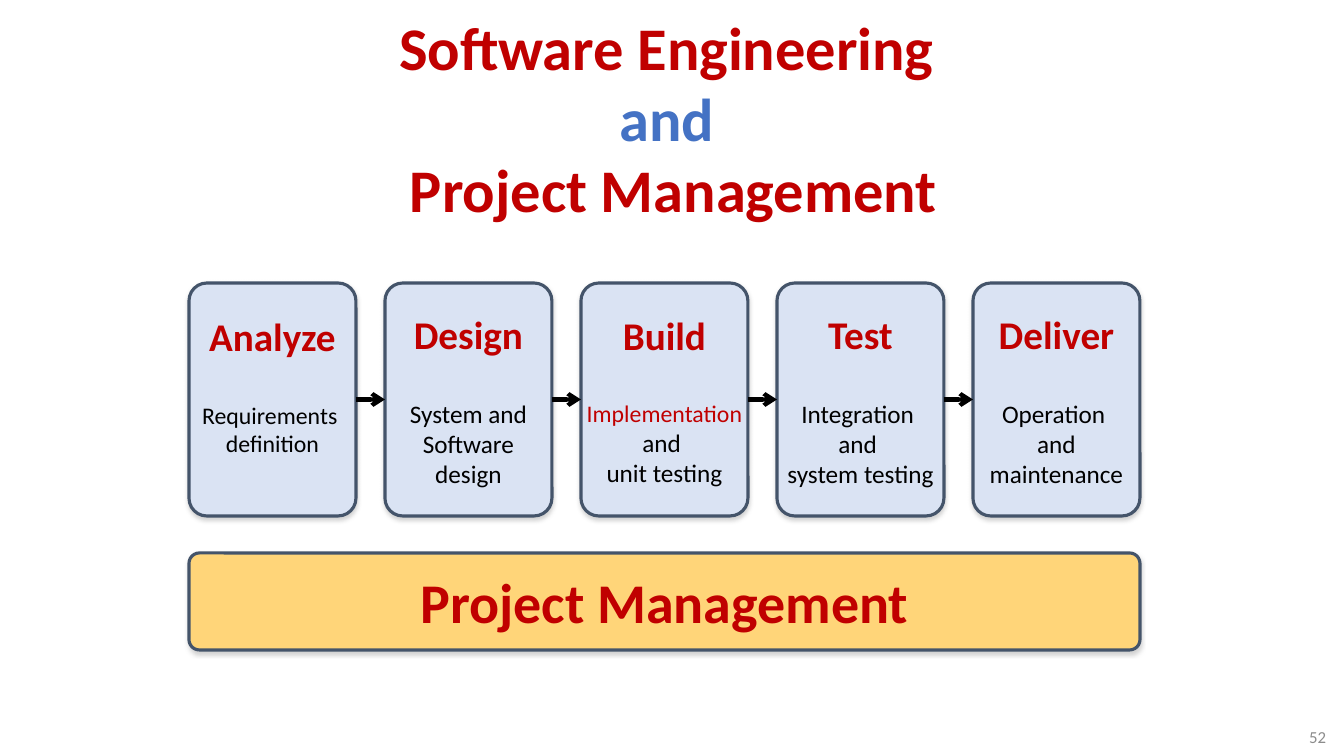
from itertools import pairwise

from lxml.etree import SubElement
from pptx import Presentation
from pptx.dml.color import RGBColor
from pptx.enum.shapes import MSO_CONNECTOR as LINK, MSO_SHAPE as SHAPE
from pptx.enum.text import MSO_ANCHOR as ANCHOR, MSO_AUTO_SIZE as FIT, PP_ALIGN as ALIGN
from pptx.oxml import parse_xml
from pptx.oxml.ns import nsdecls, qn
from pptx.util import Pt

PX = 914400 / 100.8
FONT = "Calibri"
RED = RGBColor(0xC0, 0x00, 0x00)
BLUE = RGBColor(0x44, 0x72, 0xC4)
BLACK = RGBColor(0x00, 0x00, 0x00)
GRAY = RGBColor(0x8C, 0x8C, 0x8C)
SLATE = RGBColor(0x44, 0x54, 0x6A)
PALE = RGBColor(0xDA, 0xE3, 0xF3)
GOLD = RGBColor(0xFF, 0xD5, 0x79)

LEFT, TOP, WIDE, HIGH, STEP = 189, 283, 167, 233, 196
BAR_TOP, BAR_HIGH = 553, 97
RADIUS = 0.107

# Stage name, body paragraphs as (text, size, colour) runs, bottom inset
STAGES = [
    ("Analyze", [[("Requirements \ndefinition", 17, BLACK)]], 29),
    ("Design", [[("System and Software design", 18, BLACK)]], 0),
    ("Build", [[("Implementation", 17, RED), (" ", 16, RED), ("and ", 18, BLACK)],
               [("unit testing", 18, BLACK)]], 0),
    ("Test", [[("Integration \nand \nsystem testing", 18, BLACK)]], 0),
    ("Deliver", [[("Operation \nand maintenance", 18, BLACK)]], 0),
]


def px(*nums):
    return [round(n * PX) for n in nums]


def write(para, runs, bold=False, align=ALIGN.CENTER):
    """Add (text, size, colour) runs, with a line break at each newline."""
    para.alignment = align
    for text, size, color in runs:
        for i, line in enumerate(text.split("\n")):
            if i:
                para.add_line_break()
            if line:
                run = para.add_run()
                run.text = line
                font = run.font
                font.name, font.size, font.bold = FONT, Pt(size), bold
                font.color.rgb = color


def add_title(slide):
    title = slide.shapes.title
    title.left, title.top, title.width, title.height = px(220, 13, 907, 215)
    frame = title.text_frame
    frame.auto_size, frame.word_wrap = FIT.NONE, True
    frame.vertical_anchor = ANCHOR.MIDDLE
    para = frame.paragraphs[0]
    para.line_spacing = 0.98
    write(para, [("Software Engineering \n", 43.2, RED), ("and \n", 43.2, BLUE),
                 ("Project Management", 43.2, RED)], True)


def add_box(slide, x, y, w, h, fill, head, size, foot=0):
    """Add a rounded, shadowed box with a bold red heading."""
    box = slide.shapes.add_shape(SHAPE.ROUNDED_RECTANGLE, *px(x, y, w, h))
    box.adjustments[0] = RADIUS
    box.fill.solid()
    box.fill.fore_color.rgb = fill
    box.line.color.rgb = SLATE
    box.line.width = Pt(2.25)
    box.shadow.inherit = False
    box._element.spPr.find(qn("a:effectLst")).append(parse_xml(
        f'<a:outerShdw {nsdecls("a")} blurRad="{Pt(3.1)}" dist="{Pt(1.8)}" '
        'dir="5400000" rotWithShape="0"><a:srgbClr val="808080">'
        '<a:alpha val="35000"/></a:srgbClr></a:outerShdw>'))
    frame = box.text_frame
    frame.word_wrap, frame.vertical_anchor = True, ANCHOR.MIDDLE
    frame.margin_left = frame.margin_right = frame.margin_top = 0
    frame.margin_bottom = px(foot)[0]
    write(frame.paragraphs[0], [(head, size, RED)], True)
    return box


def add_stage(slide, i, name, body, foot):
    box = add_box(slide, LEFT + i * STEP, TOP, WIDE, HIGH, PALE, name, 28, foot)
    for n, runs in enumerate(body):
        para = box.text_frame.add_paragraph()
        if n == 0:
            para.space_before = Pt(29)
        write(para, runs)
    return box


def add_arrow(slide, start, end):
    arrow = slide.shapes.add_connector(LINK.STRAIGHT, 0, 0, 0, 0)
    arrow.begin_connect(start, 3)
    arrow.end_connect(end, 1)
    arrow.line.color.rgb = BLACK
    arrow.line.width = Pt(3)
    SubElement(arrow.line._get_or_add_ln(), qn("a:tailEnd"), type="arrow")
    SubElement(arrow._element.spPr, qn("a:effectLst"))


def add_number(slide):
    frame = slide.shapes.add_textbox(*px(1230, 724, 106, 26)).text_frame
    frame.word_wrap, frame.vertical_anchor = True, ANCHOR.MIDDLE
    write(frame.paragraphs[0], [("52", 12, GRAY)], align=ALIGN.RIGHT)


def main():
    deck = Presentation()
    deck.slide_width, deck.slide_height = px(1344, 756)
    slide = deck.slides.add_slide(deck.slide_layouts[5])
    add_title(slide)
    boxes = [add_stage(slide, i, *stage) for i, stage in enumerate(STAGES)]
    for start, end in pairwise(boxes):
        add_arrow(slide, start, end)
    span = STEP * (len(STAGES) - 1) + WIDE
    add_box(slide, LEFT, BAR_TOP, span, BAR_HIGH, GOLD, "Project Management", 40)
    add_number(slide)
    deck.save("out.pptx")


if __name__ == "__main__":
    main()
